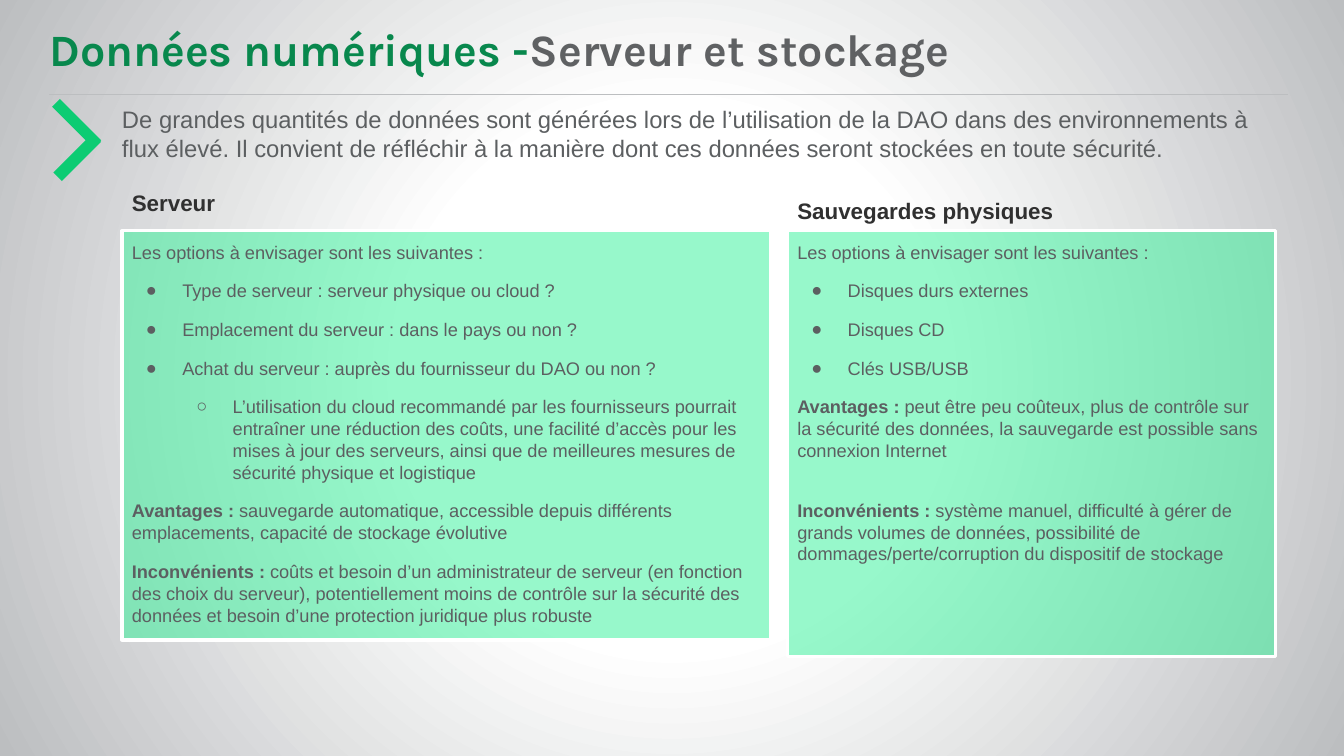
from dataclasses import dataclass

from lxml.etree import SubElement
from pptx import Presentation
from pptx.dml.color import RGBColor as RGB
from pptx.enum.shapes import MSO_CONNECTOR as CONN, MSO_SHAPE as SHAPE
from pptx.enum.text import MSO_ANCHOR as ANCHOR, MSO_AUTO_SIZE as AUTO, PP_ALIGN as ALIGN
from pptx.oxml import parse_xml
from pptx.oxml.ns import nsdecls, qn
from pptx.util import Inches, Pt

TITLE = ("Données numériques -", "Serveur et stockage")
INTRO = (
    "De grandes quantités de données sont générées lors de l’utilisation de la DAO "
    "dans des environnements à flux élevé. Il convient de réfléchir à la manière dont "
    "ces données seront stockées en toute sécurité."
)
OPTIONS = "Les options à envisager sont les suivantes :"
PROS, CONS = "Avantages : ", "Inconvénients : "

# Each paragraph: bullet level (0 = plain), bold lead, text, space before in points
PANELS = [
    {
        "heading": "Serveur",
        "heading_box": (1.21, 1.83, 5.53, 0.37),
        "heading_spacing": 1.0,
        "box": (1.21, 2.29, 6.43, 4.06),
        "paragraphs": [
            (0, "", OPTIONS, 0),
            (1, "", "Type de serveur : serveur physique ou cloud ?", 12),
            (1, "", "Emplacement du serveur : dans le pays ou non ?", 12),
            (1, "", "Achat du serveur : auprès du fournisseur du DAO ou non ?", 12),
            (2, "", "L’utilisation du cloud recommandé par les fournisseurs pourrait "
             "entraîner une réduction des coûts, une facilité d’accès pour les mises à jour "
             "des serveurs, ainsi que de meilleures mesures de sécurité physique et "
             "logistique", 12),
            (0, PROS, "sauvegarde automatique, accessible depuis différents emplacements, "
             "capacité de stockage évolutive", 12),
            (0, CONS, "coûts et besoin d’un administrateur de serveur (en fonction des "
             "choix du serveur), potentiellement moins de contrôle sur la sécurité des "
             "données et besoin d’une protection juridique plus robuste", 12),
        ],
    },
    {
        "heading": "Sauvegardes physiques",
        "heading_box": (7.81, 1.88, 5.01, 0.41),
        "heading_spacing": 1.1,
        "box": (7.81, 2.29, 4.84, 4.22),
        "paragraphs": [
            (0, "", OPTIONS, 0),
            (1, "", "Disques durs externes", 12),
            (1, "", "Disques CD", 12),
            (1, "", "Clés USB/USB", 12),
            (0, PROS, "peut être peu coûteux, plus de contrôle sur la sécurité des données, "
             "la sauvegarde est possible sans connexion Internet", 12),
            (0, CONS, "système manuel, difficulté à gérer de grands volumes de données, "
             "possibilité de dommages/perte/corruption du dispositif de stockage", 27),
        ],
    },
]
CHEVRON_BARS = [((0.49, 1.5, 0.55, 0.12), 135), ((0.47, 1.17, 0.58, 0.11), 225)]
BULLETS = {1: "●", 2: "○"}


@dataclass(frozen=True)
class Theme:
    title_font: str = "Karla"
    body_font: str = "Arial"
    title_size: float = 32
    intro_size: float = 17
    heading_size: float = 16
    body_size: float = 13
    title_green: str = "08884D"
    title_grey: str = "5F6163"
    body: str = "5C5F61"
    heading: str = "303030"
    chevron: str = "0CCC73"
    panel: str = "30F298"
    panel_alpha: int = 50
    white: str = "FFFFFF"
    grey: str = "BCBEC0"


T = Theme()


def inches(box):
    return [Inches(v) for v in box]


def add_run(p, text, size, color, bold=False, font=T.body_font):
    r = p.add_run()
    r.text = text
    r.font.name, r.font.size, r.font.bold = font, Pt(size), bold
    r.font.color.rgb = RGB.from_string(color)


def set_frame(tf, side, top, anchor=ANCHOR.TOP):
    tf.word_wrap = True
    tf.auto_size = AUTO.NONE
    tf.vertical_anchor = anchor
    tf.margin_left = tf.margin_right = Inches(side)
    tf.margin_top = tf.margin_bottom = Inches(top)


def add_bullet(p, level):
    pPr = p._p.get_or_add_pPr()
    pPr.set("marL", str(Inches(0.5 * level)))
    pPr.set("indent", str(Inches(-0.36)))
    p.level = level - 1
    SubElement(SubElement(pPr, qn("a:buClr")), qn("a:srgbClr")).set("val", T.body)
    SubElement(pPr, qn("a:buFont")).set("typeface", T.body_font)
    SubElement(pPr, qn("a:buChar")).set("char", BULLETS[level])


def add_rect(s, box, color):
    sp = s.shapes.add_shape(SHAPE.RECTANGLE, *inches(box))
    sp.shadow.inherit = False
    sp.fill.solid()
    sp.fill.fore_color.rgb = RGB.from_string(color)
    return sp


def set_background(s):
    """Radial gradient, white in the centre and grey at the corners."""
    fill = s.background.fill
    fill.gradient()
    bgPr = s._element.find(".//" + qn("p:bgPr"))
    stops = "".join(
        f'<a:gs pos="{pos * 1000}"><a:srgbClr val="{color}"/></a:gs>'
        for pos, color in ((0, T.white), (35, T.white), (100, T.grey))
    )
    radial = parse_xml(
        f'<a:gradFill {nsdecls("a")} rotWithShape="1"><a:gsLst>{stops}</a:gsLst>'
        '<a:path path="circle"><a:fillToRect l="50000" t="50000" r="50000" b="50000"/>'
        "</a:path></a:gradFill>"
    )
    bgPr.replace(bgPr.find(qn("a:gradFill")), radial)


def add_title(s):
    sp = s.shapes.title
    sp.left, sp.top, sp.width, sp.height = inches((0.49, 0.1, 11.88, 0.83))
    set_frame(sp.text_frame, 0, 0.05, ANCHOR.MIDDLE)
    p = sp.text_frame.paragraphs[0]
    p.alignment, p.line_spacing = ALIGN.LEFT, 0.9
    for text, color in zip(TITLE, (T.title_green, T.title_grey)):
        add_run(p, text, T.title_size, color, True, T.title_font)


def add_header_marks(s):
    rule = s.shapes.add_connector(CONN.STRAIGHT, *inches((0.49, 0.94, 12.77, 0.94)))
    rule.line.color.rgb = RGB.from_string(T.grey)
    rule.line.width = Pt(0.75)
    SubElement(rule._element.spPr, qn("a:effectLst"))
    for box, angle in CHEVRON_BARS:
        bar = add_rect(s, box, T.chevron)
        bar.line.fill.background()
        bar.rotation = angle


def add_text(s, box, side, text, size, color, bold=False, spacing=1.0):
    tf = s.shapes.add_textbox(*inches(box)).text_frame
    set_frame(tf, side, 0.05)
    p = tf.paragraphs[0]
    p.line_spacing = spacing
    add_run(p, text, size, color, bold)


def add_panel(s, panel):
    sp = add_rect(s, panel["box"], T.panel)
    color = sp._element.spPr.find(qn("a:solidFill")).find(qn("a:srgbClr"))
    SubElement(color, qn("a:alpha")).set("val", str(T.panel_alpha * 1000))
    sp.line.color.rgb = RGB.from_string(T.white)
    sp.line.width = Pt(2.25)
    tf = sp.text_frame
    set_frame(tf, 0.1, 0.1)
    for i, (level, lead, text, before) in enumerate(panel["paragraphs"]):
        p = tf.add_paragraph() if i else tf.paragraphs[0]
        if level:
            add_bullet(p, level)
        p.alignment = ALIGN.LEFT
        p.space_before = Pt(before)
        if lead:
            add_run(p, lead, T.body_size, T.body, True)
        add_run(p, text, T.body_size, T.body)


def main():
    prs = Presentation()
    prs.slide_width, prs.slide_height = inches((13.33, 7.5))
    s = prs.slides.add_slide(prs.slide_layouts[5])
    set_background(s)
    add_header_marks(s)
    add_title(s)
    add_text(s, (1.21, 0.99, 11.58, 0.83), 0, INTRO, T.intro_size, T.body)
    for panel in PANELS:
        add_panel(s, panel)
        add_text(s, panel["heading_box"], 0.1, panel["heading"], T.heading_size,
                 T.heading, True, panel["heading_spacing"])
    prs.save("out.pptx")


if __name__ == "__main__":
    main()
